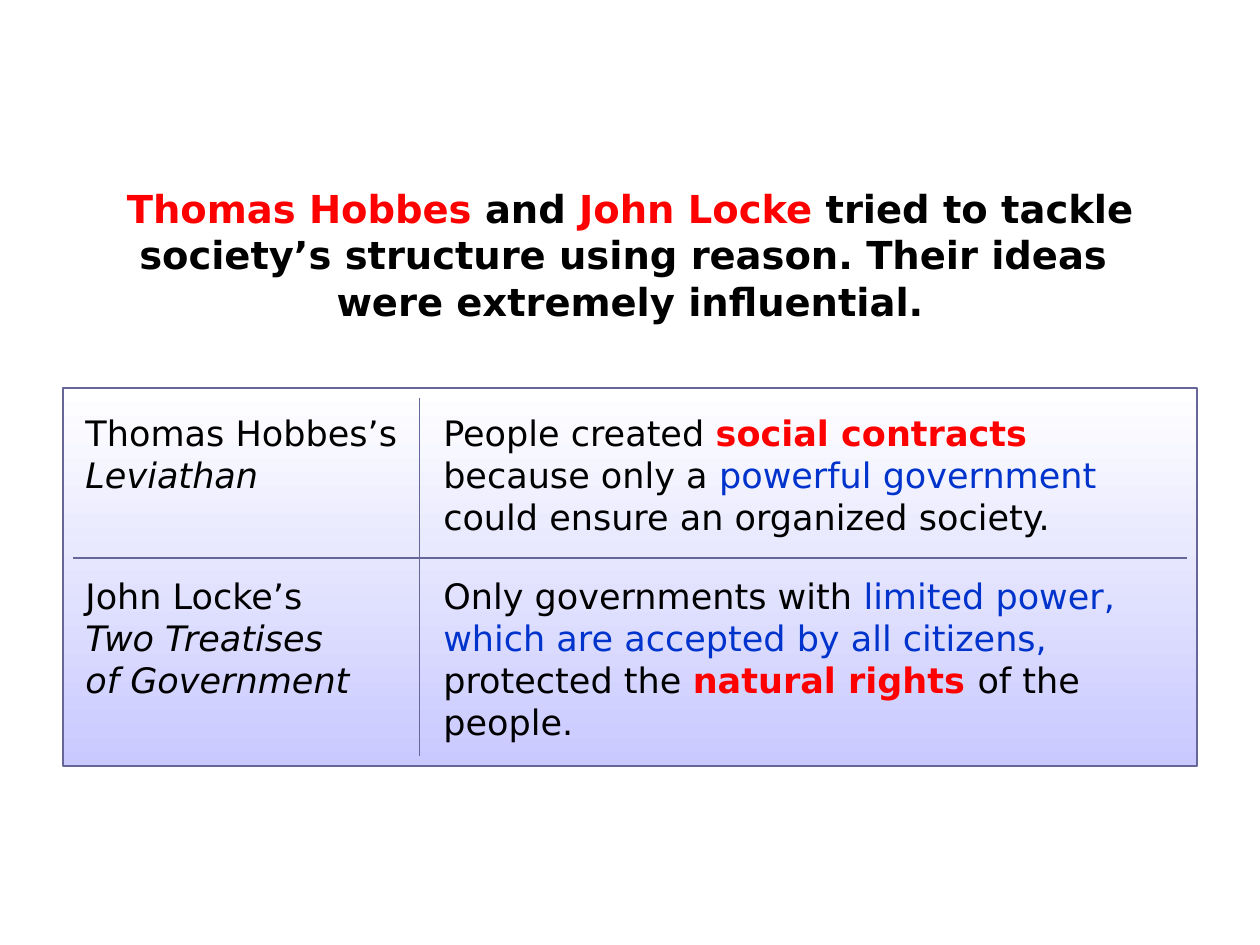
from typing import NamedTuple

from lxml.etree import SubElement
from pptx import Presentation
from pptx.dml.color import RGBColor as Rgb
from pptx.enum.shapes import MSO_CONNECTOR as Link, MSO_SHAPE as Shape
from pptx.enum.text import MSO_ANCHOR as Anchor, MSO_AUTO_SIZE as Fit, PP_ALIGN as Align
from pptx.oxml.ns import qn
from pptx.util import Inches, Pt

FONT = "DejaVu Sans"
COLORS = {"text": "000000", "key": "FF0000", "idea": "0033CC",
          "line": "666699", "top": "FFFFFF", "base": "C9C9FF"}


class Run(NamedTuple):
    text: str
    color: str = "text"
    bold: bool = False
    italic: bool = False


class Box(NamedTuple):
    left: float
    top: float
    width: float
    height: float


class Row(NamedTuple):
    top: float
    height: float
    width: float
    work: list[Run]
    view: list[Run]


HEAD = [Run("Thomas Hobbes ", "key", True), Run("and ", bold=True),
        Run("John Locke ", "key", True),
        Run("tried to tackle society’s structure using reason. Their ideas \n"
            "were extremely influential.", bold=True)]
PANEL = Box(0.5, 3.08, 9, 3)
GAP = 0.08
SPLIT_X, SPLIT_Y = 3.33, 4.43
LEFTS = (PANEL.left + GAP, 3.42)
ROWS = [
    Row(3.22, 1.3, 5.5,
        [Run("Thomas Hobbes’s "), Run("Leviathan", italic=True)],
        [Run("People created "), Run("social contracts", "key", True),
         Run(" because only a "), Run("powerful government ", "idea"),
         Run("could ensure an organized society.")]),
    Row(4.51, 1.63, 6.08,
        [Run("John Locke’s \n"), Run("Two Treatises \nof Government", italic=True)],
        [Run("Only governments with"),
         Run(" limited power, which are accepted by all citizens, ", "idea"),
         Run("protected the "), Run("natural rights ", "key", True),
         Run("of the people.")]),
]


def rgb(name: str) -> Rgb:
    return Rgb.from_string(COLORS[name])


def write(shape, runs: list[Run], size: float = 20, align=Align.LEFT) -> None:
    frame = shape.text_frame
    frame.word_wrap = True
    frame.auto_size = Fit.NONE
    frame.vertical_anchor = Anchor.TOP
    para = frame.paragraphs[0]
    para.alignment = align
    para.line_spacing = 1.0
    para.space_before = Pt(0)
    for item in runs:
        for i, part in enumerate(item.text.split("\n")):
            if i:
                para.add_line_break()
            if not part:
                continue
            run = para.add_run()
            run.text = part
            font = run.font
            font.name, font.size = FONT, Pt(size)
            font.bold, font.italic = item.bold, item.italic
            font.color.rgb = rgb(item.color)


def add_text(slide, box: Box, runs: list[Run]) -> None:
    write(slide.shapes.add_textbox(*map(Inches, box)), runs)


def add_panel(slide, box: Box) -> None:
    panel = slide.shapes.add_shape(Shape.RECTANGLE, *map(Inches, box))
    panel.shadow.inherit = False
    panel.fill.gradient()
    panel.fill.gradient_angle = 270
    for stop, name in zip(panel.fill.gradient_stops, ("top", "base")):
        stop.color.rgb = rgb(name)
    panel.line.color.rgb = rgb("line")
    panel.line.width = Pt(1.5)


def add_line(slide, *ends: float) -> None:
    line = slide.shapes.add_connector(Link.STRAIGHT, *map(Inches, ends))
    line.line.color.rgb = rgb("line")
    line.line.width = Pt(1)
    SubElement(line._element.spPr, qn("a:effectLst"))


def main() -> None:
    deck = Presentation()
    deck.slide_width, deck.slide_height = Inches(10), Inches(7.5)
    slide = deck.slides.add_slide(deck.slide_layouts[5])

    title = slide.shapes.title
    title.left, title.top, title.width, title.height = map(Inches, (0.5, 1.42, 9, 1.42))
    write(title, HEAD, size=22, align=Align.CENTER)

    add_panel(slide, PANEL)
    right, low = PANEL.left + PANEL.width, PANEL.top + PANEL.height
    add_line(slide, SPLIT_X, PANEL.top + GAP, SPLIT_X, low - GAP)
    add_line(slide, PANEL.left + GAP, SPLIT_Y, right - GAP, SPLIT_Y)

    for row in ROWS:
        add_text(slide, Box(LEFTS[0], row.top, 3.62, row.height), row.work)
        add_text(slide, Box(LEFTS[1], row.top, row.width, row.height), row.view)
    deck.save("out.pptx")


if __name__ == "__main__":
    main()
